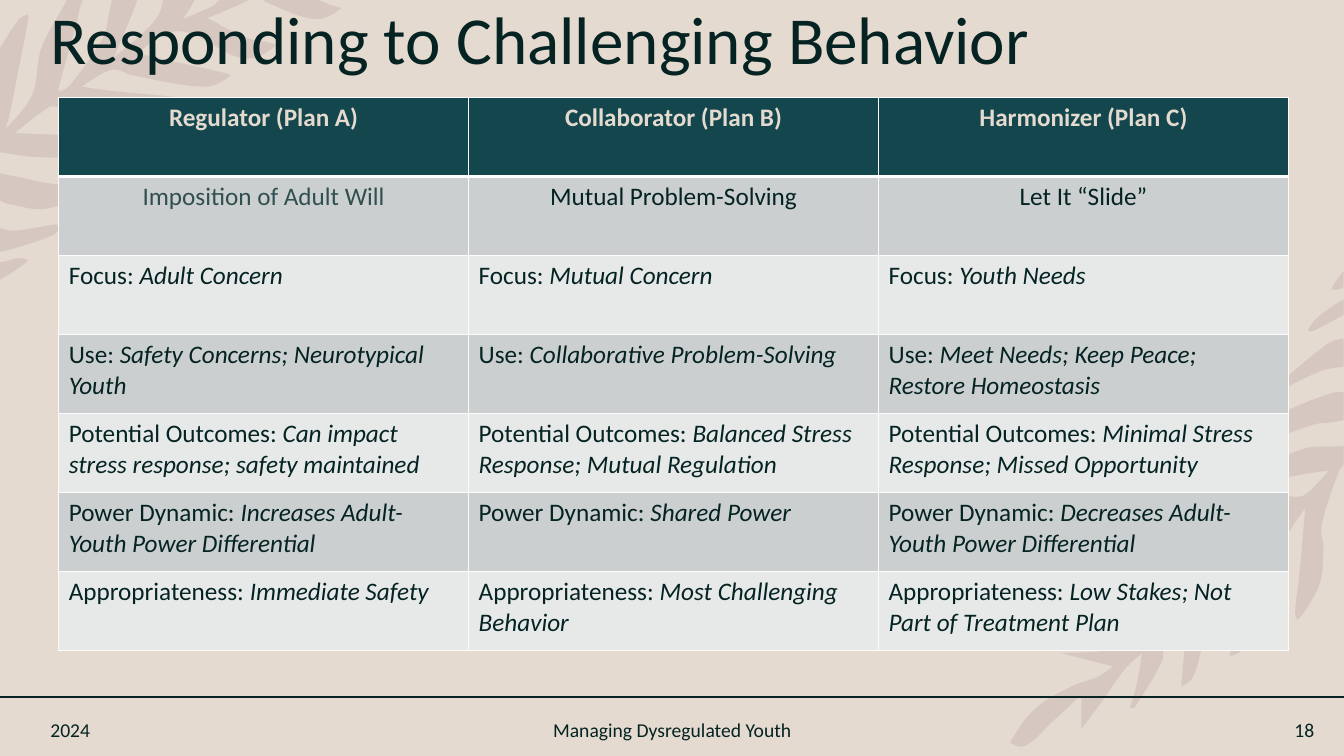
import math
import pptx
import pptx.util
import pptx.dml.color
import pptx.enum.shapes
import pptx.enum.text
import pptx.oxml
import pptx.oxml.ns
from lxml import etree

TITLE = "Responding to Challenging Behavior"
FOOTER = ["2024", "Managing Dysregulated Youth", "18"]
HEADERS = ["Regulator (Plan A)", "Collaborator (Plan B)", "Harmonizer (Plan C)"]
SUMMARIES = ["Imposition of Adult Will", "Mutual Problem-Solving", "Let It “Slide”"]
ASPECTS = {
    "Focus: ": ["Adult Concern", "Mutual Concern", "Youth Needs"],
    "Use: ": ["Safety Concerns; Neurotypical Youth", "Collaborative Problem-Solving",
              "Meet Needs; Keep Peace; Restore Homeostasis"],
    "Potential Outcomes: ": ["Can impact stress response; safety maintained",
                             "Balanced Stress Response; Mutual Regulation",
                             "Minimal Stress Response; Missed Opportunity"],
    "Power Dynamic: ": ["Increases Adult-Youth Power Differential", "Shared Power",
                        "Decreases Adult-Youth Power Differential"],
    "Appropriateness: ": ["Immediate Safety", "Most Challenging Behavior",
                          "Low Stakes; Not Part of Treatment Plan"],
}
COLORS = {"sand": "E5DACF", "ink": "042322", "teal": "13474D", "muted": "30504F",
          "gray": "CCCFD0", "pale": "E7E9E9", "border": "FDFBFB", "leaf": "57273F"}
FONT = "Calibri"
WIDTH, HEIGHT = 33.87, 19.05
POINTS_PER_254_CM = 10000

LEFT_LEAVES = [
    [(19, 256), (28, 258), (20, 265), (1, 277), (0, 277), (0, 260), (3, 260)],
    [(56, 223), (60, 224), (61, 226), (51, 234), (9, 248), (0, 250), (0, 226), (13, 229), (53, 223)],
    [(0, 172), (15, 175), (60, 183), (99, 177), (107, 175), (107, 179), (104, 183), (47, 207),
     (7, 202), (0, 199)],
    [(262, 0), (316, 0), (325, 4), (339, 8), (313, 19), (263, 2)],
    [(66, 0), (82, 0), (79, 9), (76, 23), (58, 88), (59, 91), (70, 84), (103, 36), (108, 14),
     (111, 0), (136, 0), (133, 9), (113, 57), (154, 20), (162, 0), (193, 0), (188, 9), (181, 19),
     (213, 5), (218, 0), (247, 0), (232, 7), (206, 18), (246, 38), (266, 42), (275, 45), (242, 58),
     (178, 31), (137, 53), (163, 59), (221, 72), (229, 75), (204, 86), (128, 74), (120, 70),
     (108, 70), (81, 86), (109, 90), (181, 97), (188, 99), (184, 104), (98, 114), (56, 106),
     (49, 106), (15, 132), (82, 134), (136, 131), (142, 130), (127, 149), (108, 155), (39, 156),
     (5, 152), (0, 151), (0, 48), (1, 46), (19, 19), (28, 14), (28, 19), (19, 66), (9, 116),
     (5, 128), (32, 94), (41, 48), (66, 1)],
]
RIGHT_LEAVES = [
    [(1333, 442), (1333, 461), (1329, 466), (1311, 522), (1313, 543), (1310, 577), (1295, 606),
     (1287, 615), (1285, 607), (1289, 572), (1295, 504), (1267, 551), (1260, 593), (1233, 644),
     (1220, 651), (1240, 559), (1202, 612), (1184, 671), (1172, 681), (1175, 647), (1178, 611),
     (1170, 618), (1155, 642), (1153, 656), (1125, 703), (1121, 702), (1128, 678), (1133, 648),
     (1116, 664), (1094, 695), (1073, 723), (1073, 689), (1043, 717), (1017, 740), (1002, 737),
     (1026, 704), (1063, 681), (1090, 671), (1104, 661), (1053, 648), (1131, 640), (1151, 623),
     (1093, 615), (1114, 597), (1174, 604), (1218, 568), (1174, 560), (1153, 561), (1144, 561),
     (1172, 539), (1241, 548), (1274, 514), (1247, 516), (1188, 520), (1179, 519), (1200, 502),
     (1277, 492), (1285, 493), (1296, 490), (1318, 467), (1290, 471), (1220, 485), (1211, 484),
     (1214, 479), (1294, 445), (1326, 443)],
    [(1333, 389), (1333, 417), (1321, 419), (1304, 421), (1252, 440), (1247, 442), (1257, 420),
     (1273, 409), (1321, 390)],
    [(1333, 336), (1333, 364), (1311, 368), (1275, 385), (1268, 389), (1267, 385), (1269, 381),
     (1317, 341), (1330, 336)],
    [(1333, 297), (1333, 313), (1332, 313), (1306, 327), (1300, 329), (1298, 327), (1305, 317),
     (1323, 303)],
    [(1333, 269), (1333, 284), (1329, 287), (1321, 287), (1326, 278)],
]


def rgb(name):
    return pptx.dml.color.RGBColor.from_string(COLORS[name])


def tangent(a, b, c):
    turn = math.atan2(c[1] - b[1], c[0] - b[0]) - math.atan2(b[1] - a[1], b[0] - a[0])
    if math.cos(turn) < 0.5:
        return 0, 0
    return (c[0] - a[0]) / math.dist(a, c), (c[1] - a[1]) / math.dist(a, c)


def shift(point, slope, length):
    return (min(max(point[0] + slope[0] * length, 0), 13330),
            max(point[1] + slope[1] * length, 0))


def midpoint(a, b):
    return (a[0] + b[0]) / 2, (a[1] + b[1]) / 2


def curve_segments(points):
    n = len(points)
    slopes = [tangent(points[i - 1], points[i], points[(i + 1) % n]) for i in range(n)]
    segments = []
    for i in range(n):
        j = (i + 1) % n
        start, end = points[i], points[j]
        reach = math.dist(start, end) / 3
        first, second = shift(start, slopes[i], reach), shift(end, slopes[j], -reach)
        if slopes[i] == (0, 0):
            first = midpoint(start, second)
        elif slopes[j] == (0, 0):
            second = midpoint(end, first)
        straight = slopes[i] == slopes[j] == (0, 0)
        segments.append(None if straight else (first, second, end))
    return segments


def add_leaves(s, contours):
    outlines = [[(10 * x, 10 * y) for x, y in points] for points in contours]
    scale = pptx.util.Cm(25.4) / POINTS_PER_254_CM
    builder = s.shapes.build_freeform(*outlines[0][0], scale=scale)
    for points in outlines:
        builder.move_to(*points[0])
        builder.add_line_segments(points[1:] + points[:1], close=True)
    sp = builder.convert_to_shape()
    left, top = (min(p[k] for points in outlines for p in points) for k in (0, 1))
    segments = [seg for points in outlines for seg in curve_segments(points)]
    qn = pptx.oxml.ns.qn
    for line, seg in zip(list(sp._element.iter(qn("a:lnTo"))), segments):
        if seg:
            curve = etree.Element(qn("a:cubicBezTo"))
            for x, y in seg:
                etree.SubElement(curve, qn("a:pt"), x=str(round(x - left)), y=str(round(y - top)))
            line.getparent().replace(line, curve)
    sp.shadow.inherit = False
    sp.line.fill.background()
    sp.fill.solid()
    sp.fill.fore_color.rgb = rgb("leaf")
    color = sp._element.spPr.find(qn("a:solidFill")).find(qn("a:srgbClr"))
    etree.SubElement(color, qn("a:alpha"), val="10000")


def style(r, size, color="ink", bold=False, italic=False):
    r.font.name, r.font.size = FONT, pptx.util.Pt(size)
    r.font.bold, r.font.italic = bold, italic
    r.font.color.rgb = rgb(color)


def add_label(s, text, box, size, align, anchor):
    tf = s.shapes.add_textbox(*(pptx.util.Cm(v) for v in box)).text_frame
    tf.word_wrap = True
    tf.vertical_anchor = anchor
    tf.text = text
    p = tf.paragraphs[0]
    p.alignment = align
    style(p.runs[0], size)
    return p


def set_borders(cell, widths):
    tc_pr = cell._tc.get_or_add_tcPr()
    for i, (side, width) in enumerate(zip("LRTB", widths)):
        tc_pr.insert(i, pptx.oxml.parse_xml(
            f'<a:ln{side} {pptx.oxml.ns.nsdecls("a")} w="{pptx.util.Pt(width)}"><a:solidFill>'
            f'<a:srgbClr val="{COLORS["border"]}"/></a:solidFill></a:ln{side}>'))


def add_plan_table(s):
    rows = [[[t] for t in HEADERS], [[t] for t in SUMMARIES]]
    rows += [[[label, t] for t in texts] for label, texts in ASPECTS.items()]
    col_width, row_height = 10.33, 1.99
    box = (1.48, 2.46, col_width * 3, row_height * len(rows))
    table = s.shapes.add_table(len(rows), 3, *(pptx.util.Cm(v) for v in box)).table
    for column in table.columns:
        column.width = pptx.util.Cm(col_width)
    for i, texts in enumerate(rows):
        table.rows[i].height = pptx.util.Cm(row_height)
        for j, parts in enumerate(texts):
            cell = table.cell(i, j)
            cell.fill.solid()
            cell.fill.fore_color.rgb = rgb("teal" if i == 0 else "gray" if i % 2 else "pale")
            set_borders(cell, (1, 1, 3 if i == 1 else 1, 3 if i == 0 else 1))
            p = cell.text_frame.paragraphs[0]
            p.alignment = pptx.enum.text.PP_ALIGN.CENTER if i < 2 else pptx.enum.text.PP_ALIGN.LEFT
            color = "sand" if i == 0 else "muted" if (i, j) == (1, 0) else "ink"
            for k, text in enumerate(parts):
                r = p.add_run()
                r.text = text
                style(r, 18, color, bold=i == 0, italic=k == 1)


prs = pptx.Presentation()
prs.slide_width, prs.slide_height = pptx.util.Cm(WIDTH), pptx.util.Cm(HEIGHT)
s = prs.slides.add_slide(prs.slide_layouts[6])
s.background.fill.solid()
s.background.fill.fore_color.rgb = rgb("sand")
rule_y = pptx.util.Cm(17.57)
rule = s.shapes.add_connector(pptx.enum.shapes.MSO_CONNECTOR.STRAIGHT,
                              0, rule_y, prs.slide_width, rule_y)
rule.line.color.rgb = rgb("ink")
rule.line.width = pptx.util.Pt(1.25)
etree.SubElement(rule._element.spPr, pptx.oxml.ns.qn("a:effectLst"))
for contours in (LEFT_LEAVES, RIGHT_LEAVES):
    add_leaves(s, contours)
align, anchor = pptx.enum.text.PP_ALIGN, pptx.enum.text.MSO_ANCHOR
spots = [(1.02, 2.74, align.LEFT), (12.17, 9.55, align.CENTER), (30.63, 2.74, align.RIGHT)]
for text, (left, width, side) in zip(FOOTER, spots):
    add_label(s, text, (left, 17.96, width, 0.86), 14, side, anchor.MIDDLE)
title = add_label(s, TITLE, (1.02, 0.23, 31.45, 1.88), 48, align.LEFT, anchor.BOTTOM)
title.line_spacing = 0.9
add_plan_table(s)
prs.save("out.pptx")
